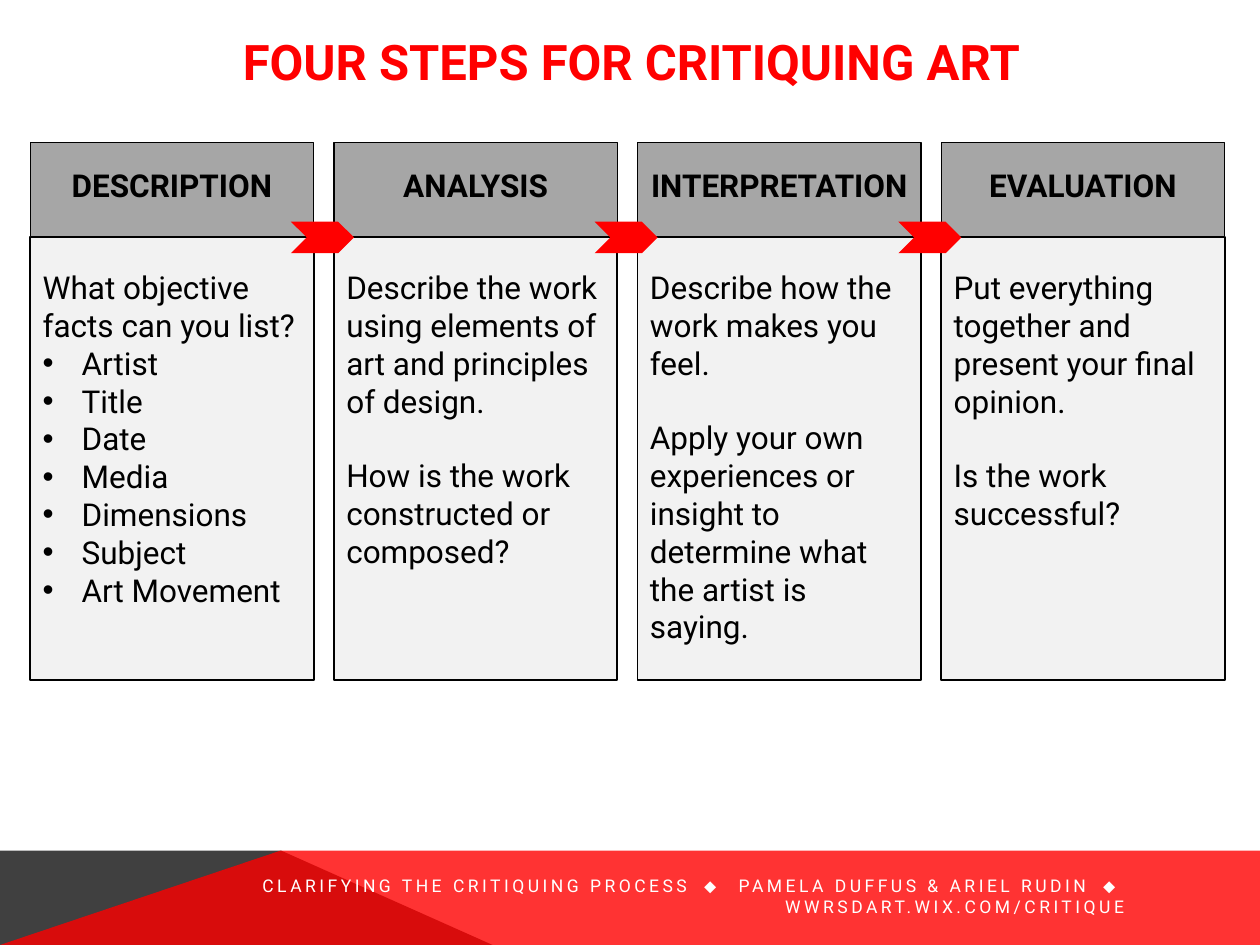
from lxml import etree
from pptx import Presentation
from pptx.dml.color import RGBColor
from pptx.enum.shapes import MSO_SHAPE
from pptx.enum.text import MSO_ANCHOR, PP_ALIGN
from pptx.oxml.ns import qn
from pptx.util import Inches, Pt

RECT, CHEVRON = MSO_SHAPE.RECTANGLE, MSO_SHAPE.CHEVRON
LEFT, CENTER, RIGHT = PP_ALIGN.LEFT, PP_ALIGN.CENTER, PP_ALIGN.RIGHT
TOP, MIDDLE = MSO_ANCHOR.TOP, MSO_ANCHOR.MIDDLE

RED = RGBColor(0xFF, 0x00, 0x00)
BLACK = RGBColor(0x00, 0x00, 0x00)
WHITE = RGBColor(0xFF, 0xFF, 0xFF)
CHARCOAL = RGBColor(0x40, 0x40, 0x40)
GRAY = RGBColor(0xA6, 0xA6, 0xA6)
PALE = RGBColor(0xF2, 0xF2, 0xF2)

COLUMN_LEFT, COLUMN_STEP, COLUMN_WIDTH = 0.24, 2.41, 2.25
LINE_GAP = 21

STEPS = [
    ("DESCRIPTION", ["What objective facts can you list?"],
     ["Artist", "Title", "Date", "Media", "Dimensions", "Subject", "Art Movement"]),
    ("ANALYSIS", ["Describe the work using elements of art and principles of design.",
                  "How is the work constructed or composed?"], []),
    ("INTERPRETATION", ["Describe how the work makes you feel.",
                        "Apply your own experiences or insight to determine "
                        "what the artist is saying."], []),
    ("EVALUATION", ["Put everything together and present your final opinion.",
                    "Is the work successful?"], []),
]
FOOTER = ["CLARIFYING THE CRITIQUING PROCESS", " ⬥ ",
          "PAMELA DUFFUS & ARIEL RUDIN", " ⬥ ", "WWRSDART.WIX.COM/CRITIQUE"]


class Deck:
    """Slide with its shared text and shape style."""

    def __init__(self, font):
        self.font = font
        self.prs = Presentation()
        self.prs.slide_width, self.prs.slide_height = Inches(10), Inches(7.5)
        self.s = self.prs.slides.add_slide(self.prs.slide_layouts[5])

    def style(self, font, size, color, bold=False):
        font.name, font.size, font.bold = self.font, Pt(size), bold
        font.color.rgb = color

    def title(self, text, x, y, w, h):
        sp = self.s.shapes.title
        sp.left, sp.top, sp.width, sp.height = map(Inches, (x, y, w, h))
        tf = sp.text_frame
        tf.text = text
        tf.vertical_anchor = MIDDLE
        p = tf.paragraphs[0]
        p.alignment = CENTER
        self.style(p.runs[0].font, 28, RED, True)

    def paint(self, sp, fill, line=None):
        sp.shadow.inherit = False
        sp.fill.solid()
        sp.fill.fore_color.rgb = fill
        if line:
            sp.line.color.rgb, sp.line.width = BLACK, Pt(line)
        else:
            sp.line.fill.background()

    def shape(self, kind, x, y, w, h, fill, line=None):
        sp = self.s.shapes.add_shape(kind, *map(Inches, (x, y, w, h)))
        self.paint(sp, fill, line)

    def polygon(self, points, fill, opacity=100):
        start, *rest = [(Inches(x), Inches(y)) for x, y in points]
        builder = self.s.shapes.build_freeform(*start)
        builder.add_line_segments(rest, close=True)
        sp = builder.convert_to_shape()
        self.paint(sp, fill)
        if opacity < 100:
            color = sp.fill._xPr.find(".//" + qn("a:srgbClr"))
            etree.SubElement(color, qn("a:alpha"), val=str(opacity * 1000))

    def text(self, lines, x, y, w, h, align=LEFT, bold=False, bullets=()):
        tf = self.s.shapes.add_textbox(*map(Inches, (x, y, w, h))).text_frame
        tf.word_wrap = True
        tf.vertical_anchor = TOP
        for i, line in enumerate([*lines, *bullets]):
            p = tf.add_paragraph() if i else tf.paragraphs[0]
            p.text = line
            p.alignment = align
            if i >= len(lines):
                self.bullet(p)
            elif i:
                p.space_before = Pt(LINE_GAP)
            self.style(p.runs[0].font, 18, BLACK, bold)

    def bullet(self, p):
        pPr = p._p.get_or_add_pPr()
        pPr.set("marL", str(Inches(0.31)))
        pPr.set("indent", str(-Inches(0.31)))
        etree.SubElement(pPr, qn("a:buFont"), typeface="Arial")
        etree.SubElement(pPr, qn("a:buChar"), char="•")

    def footer(self, parts, x, y, w, h):
        """Letter-spaced line; the diamonds are set wider and in Arial."""
        tf = self.s.shapes.add_textbox(*map(Inches, (x, y, w, h))).text_frame
        tf.word_wrap = True
        tf.vertical_anchor = MIDDLE
        p = tf.paragraphs[0]
        p.alignment = RIGHT
        for part in parts:
            r = p.add_run()
            r.text = part
            self.style(r.font, 10, WHITE)
            diamond = "⬥" in part
            if diamond:
                r.font.name = "Arial"
            r._r.get_or_add_rPr().set("spc", "500" if diamond else "200")


def main():
    deck = Deck("Roboto")
    deck.polygon([(0, 7.5), (0, 6.75), (2.23, 6.75), (3.91, 7.5)], CHARCOAL)
    deck.polygon([(0, 7.5), (2.23, 6.75), (10, 6.75), (10, 7.5)], RED, 80)
    deck.title("FOUR STEPS FOR CRITIQUING ART", 0.9, 0.18, 8.22, 0.6)

    lefts = [COLUMN_LEFT + i * COLUMN_STEP for i in range(len(STEPS))]
    for x, (heading, lines, bullets) in zip(lefts, STEPS):
        deck.shape(RECT, x, 1.88, COLUMN_WIDTH, 3.52, PALE, 1)
        deck.shape(RECT, x, 1.13, COLUMN_WIDTH, 0.75, GRAY, 0.75)
        deck.text([heading], x - 0.08, 1.27, COLUMN_WIDTH + 0.16, 0.4, CENTER, True)
        deck.text(lines, x, 2.08, COLUMN_WIDTH, 2.83, bullets=bullets)
    for x in lefts[:-1]:
        deck.shape(CHEVRON, x + 2.07, 1.76, 0.5, 0.25, RED)

    deck.footer(FOOTER, 1.11, 6.96, 7.91, 0.3)
    deck.prs.save("out.pptx")


if __name__ == "__main__":
    main()
